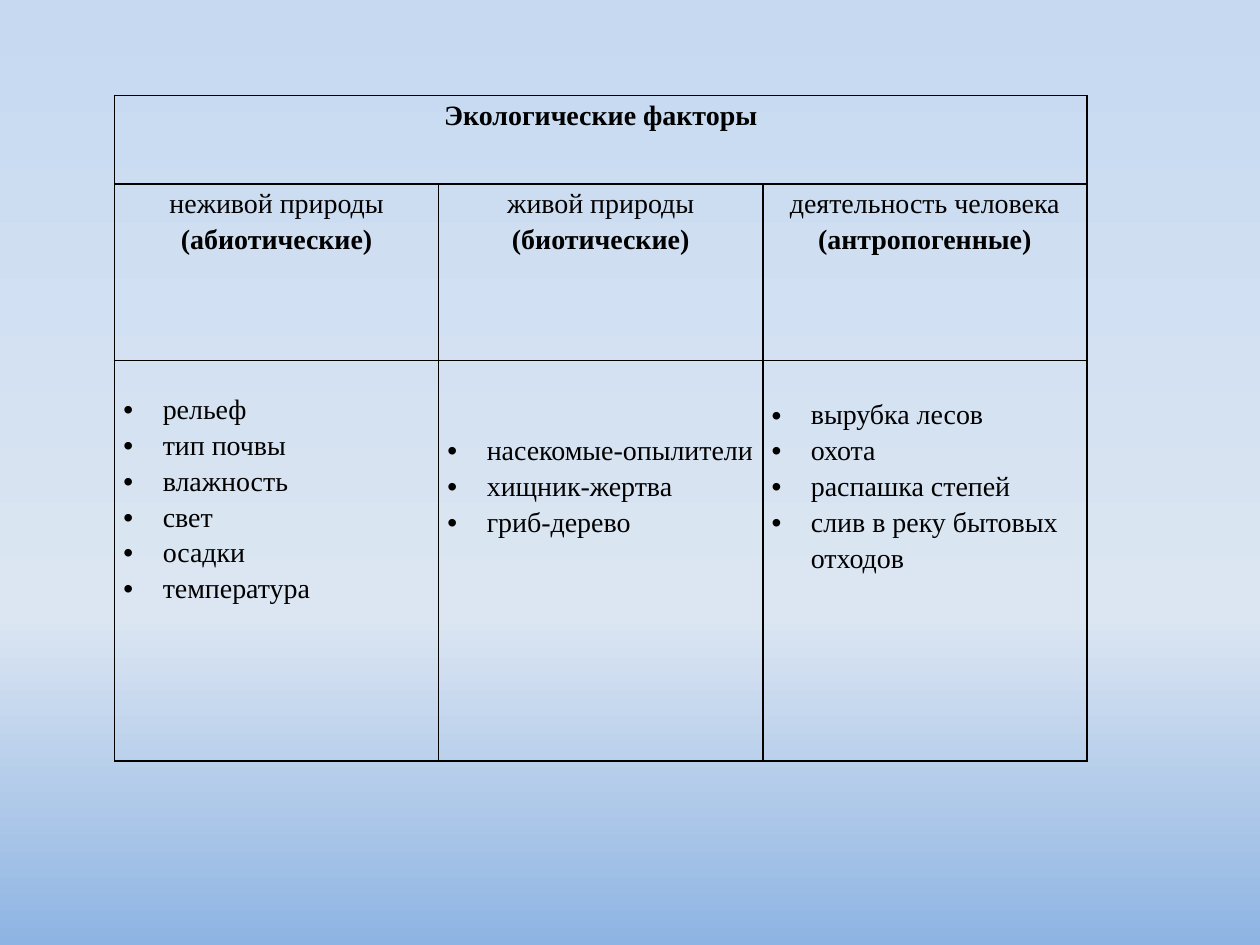
import dataclasses

import lxml.etree
import pptx
import pptx.dml.color
import pptx.enum.text
import pptx.oxml.ns
import pptx.util

Pt = pptx.util.Pt
qn = pptx.oxml.ns.qn
ALIGN = pptx.enum.text.PP_ALIGN

COLORS = {
    "ink": "000000",
    "top": "C6D9F1",
    "middle": "DCE6F2",
    "bottom": "8EB4E3",
}
FONT = "Times New Roman"
LEFT, TOP = 65.5, 54.7
WIDTH = 185.2
HEIGHTS = (50.4, 100.8, 229)
INDENT = 22.5


@dataclasses.dataclass
class Factor:
    source: str
    kind: str
    items: tuple[str, ...]
    gap: float


FACTORS = (
    Factor(
        "неживой природы",
        "(абиотические)",
        ("рельеф", "тип почвы", "влажность", "свет", "осадки", "температура"),
        17,
    ),
    Factor(
        "живой природы",
        "(биотические)",
        ("насекомые-опылители", "хищник-жертва", "гриб-дерево"),
        40.5,
    ),
    Factor(
        "деятельность человека",
        "(антропогенные)",
        ("вырубка лесов", "охота", "распашка степей", "слив в реку бытовых отходов"),
        20,
    ),
)


def add_color(parent, color: str) -> None:
    lxml.etree.SubElement(parent, qn("a:srgbClr"), val=COLORS[color])


def paint_back(slide) -> None:
    fill = slide.background.fill
    fill.gradient()
    fill.gradient_angle = 270
    stops = next(slide.element.iter(qn("a:gsLst")))
    for stop in list(stops):
        stops.remove(stop)
    for place, color in ((0, "top"), (65, "middle"), (100, "bottom")):
        stop = lxml.etree.SubElement(stops, qn("a:gs"), pos=str(place * 1000))
        add_color(stop, color)


def style_cell(cell) -> None:
    cell.margin_left = cell.margin_right = Pt(5)
    cell.margin_top = cell.margin_bottom = 0
    props = cell._tc.get_or_add_tcPr()
    for side in ("lnL", "lnR", "lnT", "lnB"):
        line = lxml.etree.SubElement(props, qn(f"a:{side}"), w=str(Pt(1)))
        add_color(lxml.etree.SubElement(line, qn("a:solidFill")), "ink")
    cell.fill.background()


def write(cell, text: str, *, bold: bool = False, bullet: bool = False) -> None:
    frame = cell.text_frame
    para = frame.add_paragraph() if frame.text else frame.paragraphs[0]
    para.alignment = ALIGN.LEFT if bullet else ALIGN.CENTER
    para.line_spacing = 1.15
    if bullet:
        props = para._p.get_or_add_pPr()
        props.set("marL", str(Pt(INDENT)))
        props.set("indent", str(-Pt(INDENT)))
        lxml.etree.SubElement(props, qn("a:buFont"), typeface="Arial")
        lxml.etree.SubElement(props, qn("a:buChar"), char="•")
    run = para.add_run()
    run.text = text
    run.font.name = FONT
    run.font.size = Pt(16)
    run.font.bold = bold
    run.font.color.rgb = pptx.dml.color.RGBColor.from_string(COLORS["ink"])


def fill_column(table, index: int, factor: Factor) -> None:
    head, body = table.cell(1, index), table.cell(2, index)
    write(head, factor.source)
    write(head, factor.kind, bold=True)
    body.margin_top = Pt(factor.gap)
    for item in factor.items:
        write(body, item, bullet=True)


def add_grid(slide) -> None:
    count = len(FACTORS)
    table = slide.shapes.add_table(
        len(HEIGHTS), count, Pt(LEFT), Pt(TOP), Pt(WIDTH * count), Pt(sum(HEIGHTS))
    ).table
    table.first_row = table.horz_banding = False
    for column in table.columns:
        column.width = Pt(WIDTH)
    for row, height in zip(table.rows, HEIGHTS):
        row.height = Pt(height)
    for cell in table.iter_cells():
        style_cell(cell)
    table.cell(0, 0).merge(table.cell(0, count - 1))
    write(table.cell(0, 0), "Экологические факторы", bold=True)
    for index, factor in enumerate(FACTORS):
        fill_column(table, index, factor)


def main() -> None:
    deck = pptx.Presentation()
    deck.slide_width, deck.slide_height = Pt(720), Pt(540)
    slide = deck.slides.add_slide(deck.slide_layouts[6])
    paint_back(slide)
    add_grid(slide)
    deck.save("out.pptx")


if __name__ == "__main__":
    main()
